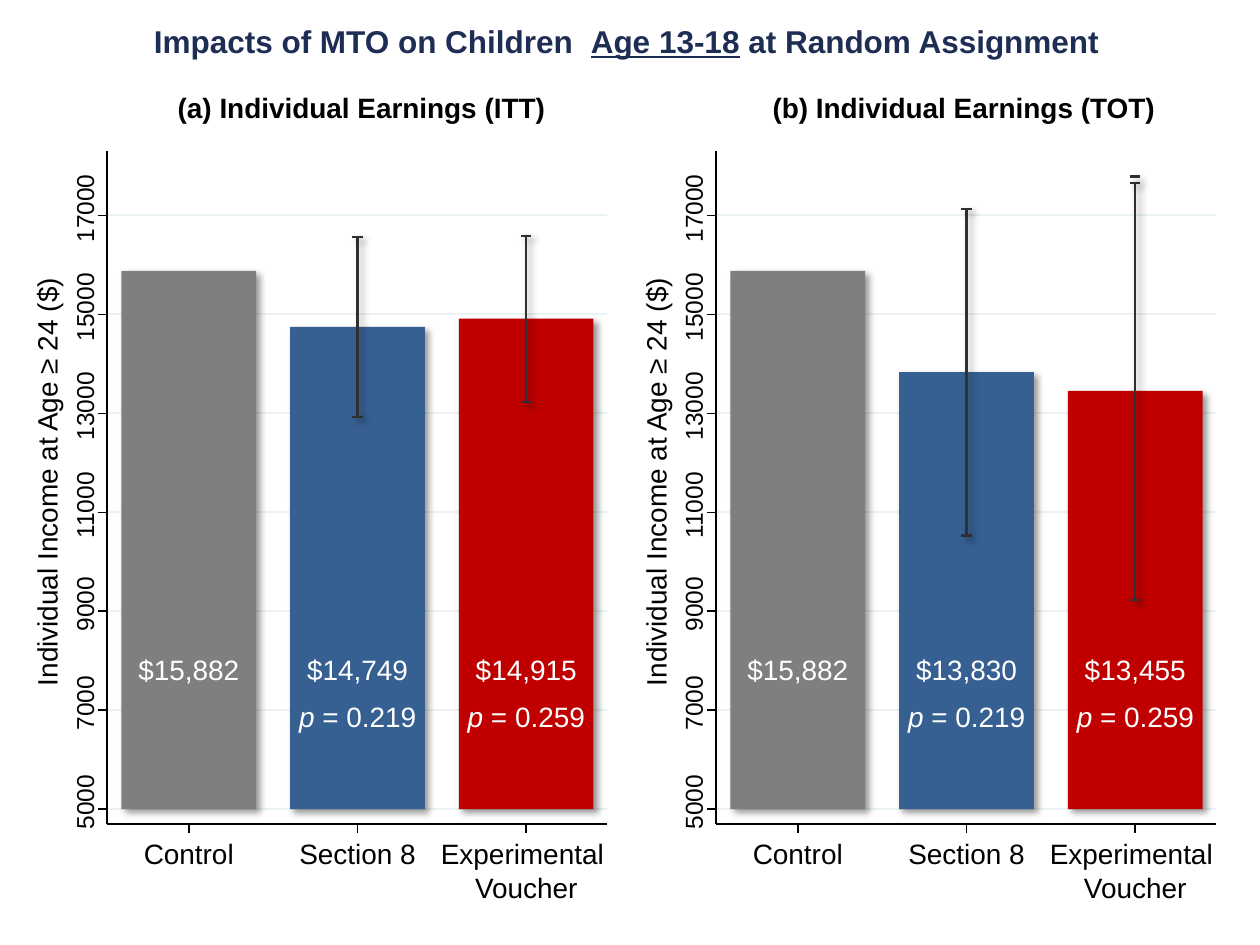
"""Build a slide with two bar panels of earnings impacts and their error bars."""
from dataclasses import dataclass

from lxml.etree import SubElement
from pptx import Presentation
from pptx.dml.color import RGBColor
from pptx.enum.shapes import MSO_CONNECTOR, MSO_SHAPE
from pptx.enum.text import MSO_ANCHOR, PP_ALIGN
from pptx.oxml.ns import qn
from pptx.util import Pt

HEADLINE = [("Impacts of MTO on Children  ", ""), ("Age 13-18", "underline"),
            (" at Random Assignment", "")]
INCOME_TITLE = "Individual Income at Age ≥ 24 ($)"
INCOME_TICKS = range(5000, 17001, 2000)
GROUPS = [["Control"], ["Section 8"], ["Experimental ", "Voucher"]]
PANELS = [
    {"title": "(a) Individual Earnings (ITT)", "axis_x": 61.2, "title_x": 206.6,
     "bars": [{"income": 15882},
              {"income": 14749, "p": "0.219", "span": (12925, 16565), "caps": (12925, 16565)},
              {"income": 14915, "p": "0.259", "span": (13230, 16590), "caps": (13230, 16590)}]},
    {"title": "(b) Individual Earnings (TOT)", "axis_x": 409.2, "title_x": 550.8,
     "bars": [{"income": 15882},
              {"income": 13830, "p": "0.219", "span": (10530, 17125), "caps": (10530, 17125)},
              {"income": 13455, "p": "0.259", "span": (9230, 17660),
               "caps": (9230, 17660, 17785)}]},
]


@dataclass(frozen=True)
class Theme:
    """Colours, type sizes and line widths."""
    font: str = "Arial"
    navy: str = "1E2D53"
    ink: str = "000000"
    white: str = "FFFFFF"
    grid: str = "EAF2F3"
    error: str = "303030"
    bars: tuple = ("7F7F7F", "376092", "C00000")
    headline: int = 18
    body: int = 16
    tick: int = 14
    thin: float = 0.88
    medium: float = 1.25


THEME = Theme()
BASE_Y, POINTS_PER_DOLLAR = 462.4, 339.3 / 12000
AXIS_TOP, AXIS_BOTTOM, AXIS_WIDTH = 86.4, 470.9, 285.8
BAR_INSET, BAR_WIDTH, BAR_STEP = 8.2, 77, 96.4
TICK, CAP = 5, 2.9


def income_y(income):
    return BASE_Y - (income - INCOME_TICKS[0]) * POINTS_PER_DOLLAR


def set_effects(shape, shadowed):
    effects = SubElement(shape._element.spPr, qn("a:effectLst"))
    if shadowed:
        shadow = SubElement(effects, qn("a:outerShdw"), blurRad=str(Pt(4)), dist=str(Pt(3)),
                            dir=str(45 * 60000), algn="tl", rotWithShape="0")
        color = SubElement(shadow, qn("a:srgbClr"), val=THEME.ink)
        SubElement(color, qn("a:alpha"), val="40000")


def add_line(slide, x1, y1, x2, y2, color, width, shadowed=False):
    line = slide.shapes.add_connector(MSO_CONNECTOR.STRAIGHT, Pt(x1), Pt(y1), Pt(x2), Pt(y2))
    line.line.color.rgb = RGBColor.from_string(color)
    line.line.width = Pt(width)
    set_effects(line, shadowed)


def write(frame, paragraphs, size, color, bold=False, align=PP_ALIGN.CENTER):
    for index, runs in enumerate(paragraphs):
        paragraph = frame.add_paragraph() if index else frame.paragraphs[0]
        paragraph.alignment = align
        font = paragraph.font
        font.name, font.size, font.bold = THEME.font, Pt(size), bold
        font.color.rgb = RGBColor.from_string(color)
        for text, style in runs:
            run = paragraph.add_run()
            run.text = text
            if style:
                setattr(run.font, style, True)


def add_label(slide, paragraphs, x, y, width, height, size=THEME.body, color=THEME.ink,
              rotation=0, padded=False, wrap=False, **options):
    label = slide.shapes.add_textbox(Pt(x), Pt(y), Pt(width), Pt(height))
    label.rotation = rotation
    frame = label.text_frame
    frame.word_wrap = wrap
    if not padded:
        frame.margin_left = frame.margin_right = frame.margin_top = frame.margin_bottom = 0
    write(frame, paragraphs, size, color, **options)


def add_upright(slide, text, center_x, center_y, width, height, size):
    add_label(slide, [[(text, "")]], center_x - width / 2, center_y - height / 2,
              width, height, size, rotation=270)


def add_bar(slide, left, bar, color):
    top = income_y(bar["income"])
    column = slide.shapes.add_shape(MSO_SHAPE.RECTANGLE, Pt(left), Pt(top),
                                    Pt(BAR_WIDTH), Pt(BASE_Y - top))
    column.fill.solid()
    column.fill.fore_color.rgb = RGBColor.from_string(color)
    column.line.fill.background()
    set_effects(column, True)


def add_error_bar(slide, center, bar):
    low, high = map(income_y, bar["span"])
    add_line(slide, center, low, center, high, THEME.error, THEME.medium, True)
    for y in map(income_y, bar["caps"]):
        add_line(slide, center - CAP, y, center + CAP, y, THEME.error, THEME.medium, True)


def add_axes(slide, axis_x, centers):
    add_line(slide, axis_x, AXIS_BOTTOM, axis_x, AXIS_TOP, THEME.ink, THEME.thin)
    for income in INCOME_TICKS:
        y = income_y(income)
        add_line(slide, axis_x, y, axis_x - TICK, y, THEME.ink, THEME.thin)
        add_upright(slide, str(income), axis_x - 13, y - 4, 46, 17, THEME.tick)
    add_line(slide, axis_x, AXIS_BOTTOM, axis_x + AXIS_WIDTH, AXIS_BOTTOM, THEME.ink, THEME.thin)
    for center, group in zip(centers, GROUPS):
        add_line(slide, center, AXIS_BOTTOM, center, AXIS_BOTTOM + TICK, THEME.ink, THEME.thin)
        add_label(slide, [[(line, "")] for line in group], center - 52, 478,
                  104, 19.4 * len(group))
    add_upright(slide, INCOME_TITLE, axis_x - 34.6, 275.5, 250, 19.4, THEME.body)


def add_panel(slide, panel):
    axis_x = panel["axis_x"]
    lefts = [axis_x + BAR_INSET + BAR_STEP * index for index in range(len(GROUPS))]
    centers = [left + BAR_WIDTH / 2 for left in lefts]
    for y in map(income_y, INCOME_TICKS):
        add_line(slide, axis_x, y, axis_x + AXIS_WIDTH, y, THEME.grid, THEME.medium)
    for left, bar, color in zip(lefts, panel["bars"], THEME.bars):
        add_bar(slide, left, bar, color)
    for center, bar in zip(centers, panel["bars"]):
        if "span" in bar:
            add_error_bar(slide, center, bar)
    add_axes(slide, axis_x, centers)
    add_label(slide, [[(panel["title"], "")]], panel["title_x"] - 125, 48.2, 250, 26.6,
              padded=True, bold=True)
    for left, bar in zip(lefts, panel["bars"]):
        add_label(slide, [[(f"${bar['income']:,}", "")]], left, 369.4, BAR_WIDTH, 26.6,
                  color=THEME.white, padded=True, wrap=True)
        if "p" in bar:
            add_label(slide, [[("p", "italic"), (f" = {bar['p']}", "")]], left - 2, 396, 87, 26.6,
                      color=THEME.white, padded=True, wrap=True, align=PP_ALIGN.LEFT)


def main():
    deck = Presentation()
    deck.slide_width, deck.slide_height = Pt(720), Pt(540)
    slide = deck.slides.add_slide(deck.slide_layouts[5])
    headline = slide.shapes.title
    headline.left, headline.top, headline.width, headline.height = map(Pt, (-2, 9, 720, 28.8))
    headline.text_frame.vertical_anchor = MSO_ANCHOR.TOP
    write(headline.text_frame, [HEADLINE], THEME.headline, THEME.navy, bold=True)
    for panel in PANELS:
        add_panel(slide, panel)
    deck.save("out.pptx")


if __name__ == "__main__":
    main()
